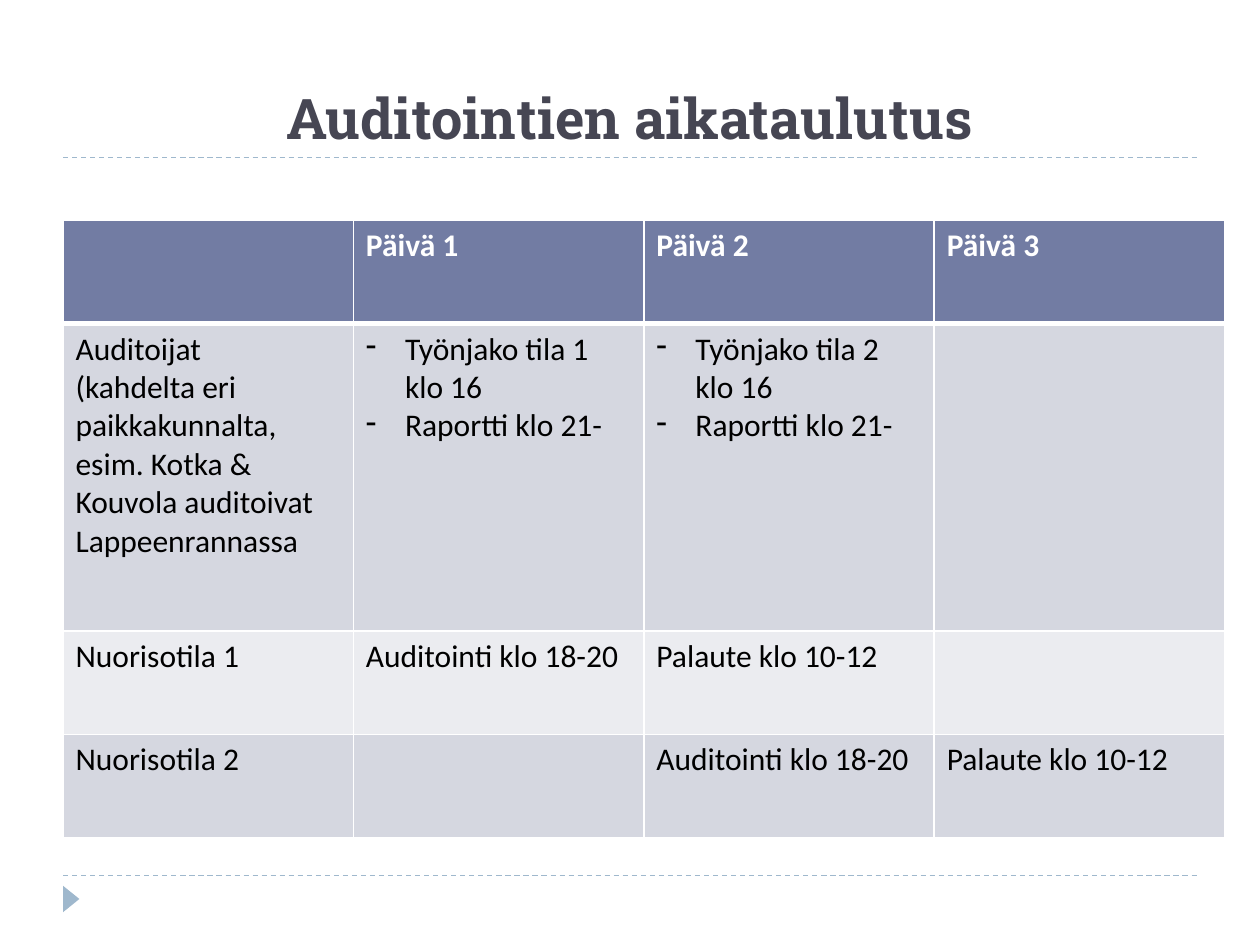
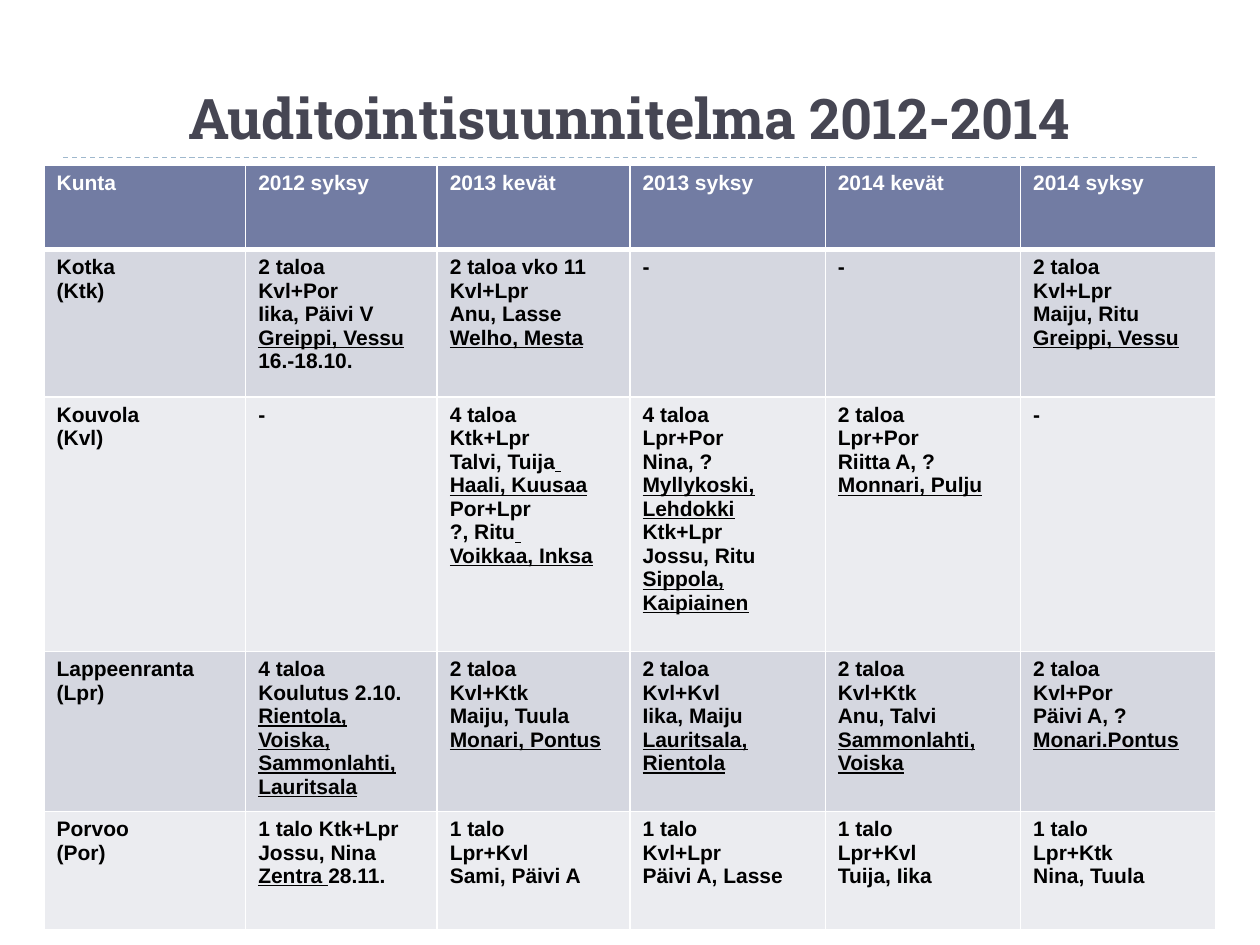
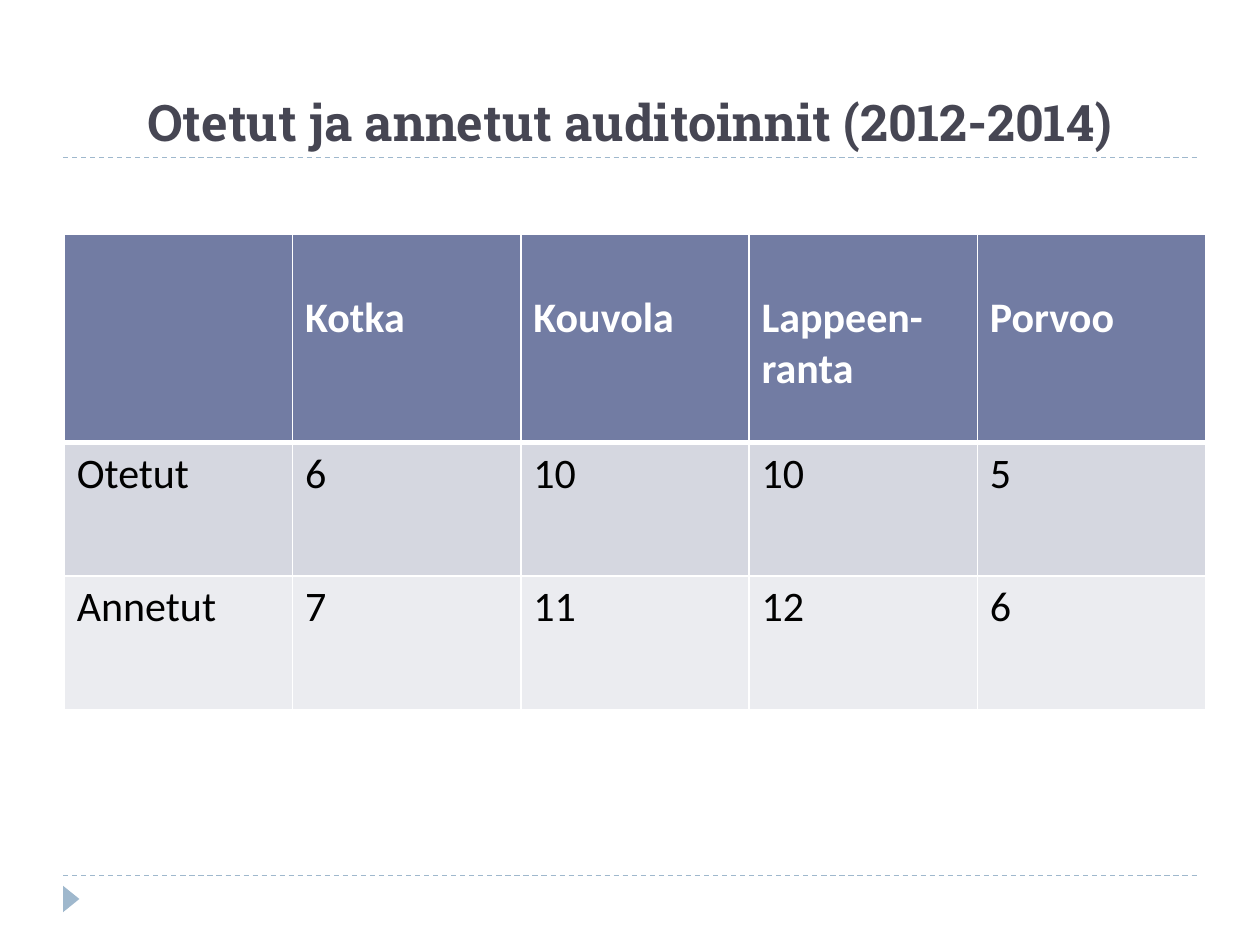
"""Build three slides on the timetable, plan and totals of youth centre audits."""
from collections import namedtuple

from lxml.etree import SubElement
from pptx import Presentation
from pptx.dml.color import RGBColor
from pptx.enum.dml import MSO_LINE
from pptx.enum.shapes import MSO_CONNECTOR, MSO_SHAPE
from pptx.enum.text import MSO_ANCHOR, MSO_AUTO_SIZE, PP_ALIGN
from pptx.oxml.ns import qn
from pptx.util import Inches, Pt

Theme = namedtuple("Theme", "title accent header bands white black title_font thin thick")
theme = Theme(
    title=RGBColor.from_string("464653"),
    accent=RGBColor.from_string("9FB8CD"),
    header=RGBColor.from_string("727CA3"),
    bands=(RGBColor.from_string("D5D7E0"), RGBColor.from_string("EBECF0")),
    white=RGBColor.from_string("FFFFFF"),
    black=RGBColor.from_string("000000"),
    title_font="Roboto Slab",
    thin=Pt(1),
    thick=Pt(3),
)

Sheet = namedtuple(
    "Sheet", "title title_size title_left left top columns rows font size bold header_inset cells")
sheets = [
    Sheet(
        "Auditointien aikataulutus", 32, 0.5, 0.5, 1.75, [9.22 / 4] * 4, [0.82, 2.44, 0.82, 0.82],
        "Calibri", 18, False, 0.05,
        [
            ["", "Päivä 1", "Päivä 2", "Päivä 3"],
            ["Auditoijat\n(kahdelta eri paikkakunnalta, esim. Kotka & Kouvola auditoivat Lappeenrannassa",
             "- Työnjako tila 1 klo 16\n- Raportti klo 21-",
             "- Työnjako tila 2 klo 16\n- Raportti klo 21-", ""],
            ["Nuorisotila 1", "Auditointi klo 18-20", "Palaute klo 10-12", ""],
            ["Nuorisotila 2", "", "Auditointi klo 18-20", "Palaute klo 10-12"],
        ],
    ),
    Sheet(
        "Auditointisuunnitelma 2012-2014", 32, 0.5, 0.35, 1.31,
        [1.6, 1.52, 1.53, 1.55, 1.55, 1.55], [0.67, 1.17, 2.02, 1.27, 0.94],
        "Arial", 12, True, 0.05,
        [
            ["Kunta", "2012 syksy", "2013 kevät", "2013 syksy", "2014 kevät", "2014 syksy"],
            ["Kotka\n(Ktk)",
             "2 taloa\nKvl+Por\nIika, Päivi V\n_Greippi, Vessu_\n16.-18.10.",
             "2 taloa vko 11\nKvl+Lpr\nAnu, Lasse\n_Welho, Mesta_",
             "-", "-",
             "2 taloa\nKvl+Lpr\nMaiju, Ritu\n_Greippi, Vessu_"],
            ["Kouvola\n(Kvl)", "-",
             "4 taloa\nKtk+Lpr\nTalvi, Tuija_ _\n_Haali, Kuusaa_\nPor+Lpr\n?, Ritu_ _\n_Voikkaa, Inksa_",
             "4 taloa\nLpr+Por\nNina, ?\n_Myllykoski, Lehdokki_\nKtk+Lpr\nJossu, Ritu\n_Sippola, Kaipiainen_",
             "2 taloa\nLpr+Por\nRiitta A, ?\n_Monnari, Pulju_", "-"],
            ["Lappeenranta\n(Lpr)",
             "4 taloa\nKoulutus 2.10.\n_Rientola, Voiska,_\n_Sammonlahti, Lauritsala_",
             "2 taloa\nKvl+Ktk\nMaiju, Tuula_ Monari, Pontus_",
             "2 taloa\nKvl+Kvl\nIika, Maiju\n_Lauritsala, Rientola_",
             "2 taloa\nKvl+Ktk\nAnu, Talvi\n_Sammonlahti, Voiska_",
             "2 taloa\nKvl+Por\nPäivi A, ?\n_Monari.Pontus_"],
            ["Porvoo\n(Por)",
             "1 talo Ktk+Lpr\nJossu, Nina\n_Zentra _28.11.",
             "1 talo\nLpr+Kvl\nSami, Päivi A",
             "1 talo\nKvl+Lpr\nPäivi A, Lasse",
             "1 talo\nLpr+Kvl\nTuija, Iika",
             "1 talo\nLpr+Ktk\nNina, Tuula"],
        ],
    ),
    Sheet(
        "Otetut ja annetut auditoinnit (2012-2014)", 28.8, 0.43, 0.51, 1.86,
        [9.06 / 5] * 5, [1.65, 1.06, 1.06], "Calibri", 24, False, 0.46,
        [
            ["", "Kotka", "Kouvola", "Lappeen-ranta", "Porvoo"],
            ["Otetut", "6", "10", "10", "5"],
            ["Annetut", "7", "11", "12", "6"],
        ],
    ),
]


def style_font(font, name, size, color, bold):
    """Set the face, size, colour and weight of a font."""
    font.name, font.size, font.bold = name, Pt(size), bold
    font.color.rgb = color


def add_border(cell, side, width):
    """Add a solid white border to one side of a cell."""
    border = SubElement(cell._tc.get_or_add_tcPr(), qn(f"a:ln{side}"), w=str(width))
    fill = SubElement(border, qn("a:solidFill"))
    SubElement(fill, qn("a:srgbClr"), val=str(theme.white))


deck = Presentation()
deck.slide_width, deck.slide_height = Inches(10), Inches(7.5)

for sheet in sheets:
    page = deck.slides.add_slide(deck.slide_layouts[5])

    for height in (6.95, 1.25):
        rule = page.shapes.add_connector(
            MSO_CONNECTOR.STRAIGHT, Inches(0.5), Inches(height), Inches(9.5), Inches(height))
        rule.line.color.rgb = theme.accent
        rule.line.width = Pt(0.75)
        rule.line.dash_style = MSO_LINE.DASH
        SubElement(rule._element.spPr, qn("a:effectLst"))

    marker = page.shapes.add_shape(
        MSO_SHAPE.ISOSCELES_TRIANGLE, Inches(0.46), Inches(7.07), Inches(0.21), Inches(0.13))
    marker.rotation = 90
    marker.shadow.inherit = False
    marker.fill.solid()
    marker.fill.fore_color.rgb = theme.accent
    marker.line.fill.background()

    title = page.shapes.title
    title.left, title.top = Inches(sheet.title_left), Inches(0.17)
    title.width, title.height = deck.slide_width - 2 * title.left, Inches(1.08)
    title.text_frame.text = sheet.title
    title.text_frame.auto_size = MSO_AUTO_SIZE.NONE
    title.text_frame.vertical_anchor = MSO_ANCHOR.BOTTOM
    heading = title.text_frame.paragraphs[0]
    heading.alignment = PP_ALIGN.CENTER
    style_font(heading.font, theme.title_font, sheet.title_size, theme.title, True)

    table = page.shapes.add_table(
        len(sheet.rows), len(sheet.columns), Inches(sheet.left), Inches(sheet.top),
        Inches(sum(sheet.columns)), Inches(sum(sheet.rows))).table
    table.first_row = table.horz_banding = False
    for column, width in zip(table.columns, sheet.columns):
        column.width = Inches(width)
    for row, height in zip(table.rows, sheet.rows):
        row.height = Inches(height)

    for row_index, texts in enumerate(sheet.cells):
        is_header = row_index == 0
        for column_index, text in enumerate(texts):
            cell = table.cell(row_index, column_index)
            if is_header:
                cell.margin_top = Inches(sheet.header_inset)
            for side in "LRTB":
                under_header = (row_index, side) in ((0, "B"), (1, "T"))
                add_border(cell, side, theme.thick if under_header else theme.thin)
            cell.fill.solid()
            cell.fill.fore_color.rgb = theme.header if is_header else theme.bands[(row_index - 1) % 2]

            for line_index, line in enumerate(text.split("\n")):
                frame = cell.text_frame
                para = frame.add_paragraph() if line_index else frame.paragraphs[0]
                style_font(para.font, sheet.font, sheet.size,
                           theme.white if is_header else theme.black, is_header or sheet.bold)
                if line.startswith("- "):
                    line = line[2:]
                    properties = para._p.get_or_add_pPr()
                    properties.set("marL", str(Inches(0.31)))
                    properties.set("indent", str(-Inches(0.31)))
                    bullet = SubElement(properties, qn("a:buChar"), char="-")
                    properties.insert(0, bullet)
                for part_index, part in enumerate(line.split("_")):
                    if part:
                        span = para.add_run()
                        span.text = part
                        if part_index % 2:
                            span.font.underline = True

deck.save("out.pptx")
